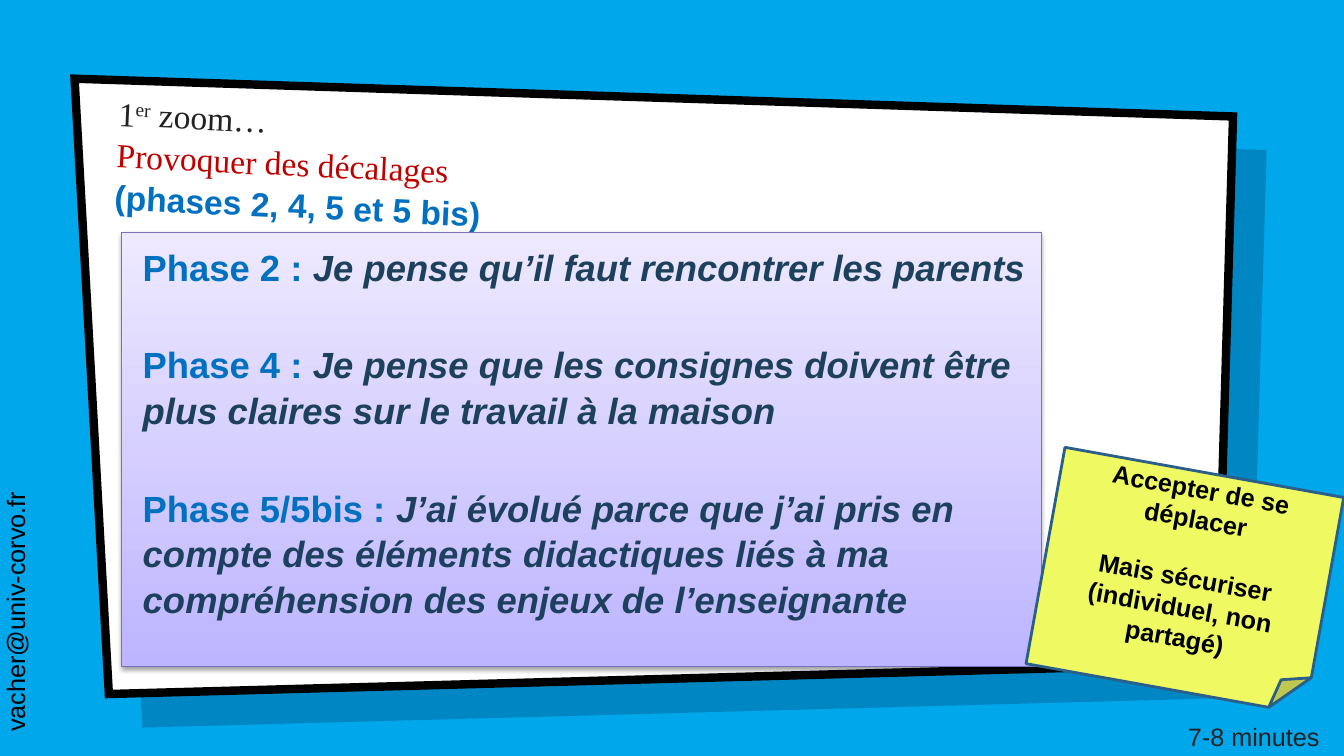
from lxml import etree
from pptx import Presentation
from pptx.dml import color
from pptx.enum import shapes, text
from pptx.oxml import ns
from pptx.util import Pt

INK, BLUE, NAVY = "222222", "0070C0", "1D405D"


def rgb(value):
    return color.RGBColor.from_string(value)


def add_node(parent, tag, **attributes):
    node = etree.SubElement(parent, ns.qn(tag))
    for name, value in attributes.items():
        node.set(name, str(value))
    return node


def set_font(font, size, hue, name="Arial", bold=False):
    font.size, font.name, font.bold = Pt(size), name, bold
    font.color.rgb = rgb(hue)


def set_frame(frame, insets, anchor=text.MSO_ANCHOR.TOP):
    """Insets are left, top, right, bottom in points."""
    frame.word_wrap = True
    frame.auto_size = text.MSO_AUTO_SIZE.NONE
    frame.vertical_anchor = anchor
    (frame.margin_left, frame.margin_top,
     frame.margin_right, frame.margin_bottom) = map(Pt, insets)


def add_panel(page, left, top, fill):
    """Slanted four-cornered panel."""
    corners = [(0, 0), (827.5, 27), (816, 418), (24.5, 439.5)]
    points = [(Pt(left + x), Pt(top + y)) for x, y in corners]
    builder = page.shapes.build_freeform(*points[0])
    builder.add_line_segments(points[1:], close=True)
    panel = builder.convert_to_shape()
    panel.shadow.inherit = False
    panel.fill.solid()
    panel.fill.fore_color.rgb = rgb(fill)
    return panel


def add_card(page, left, top):
    shade = add_panel(page, left + 24, top + 24, "001936")
    shade.line.fill.background()
    fill = shade._element.spPr.find(ns.qn("a:solidFill"))
    add_node(fill[0], "a:alpha", val=22000)
    card = add_panel(page, left, top, "FFFFFF")
    card.line.color.rgb = rgb("000000")
    card.line.width = Pt(6)
    add_node(card.line._get_or_add_ln(), "a:miter", lim=800000)


def place_title(page, left, top, width, height):
    title = page.shapes.title
    page.shapes._spTree.append(title._element)  # in front of the card
    title.left, title.top, title.width, title.height = map(Pt, (left, top, width, height))
    title.rotation = 2.7
    set_frame(title.text_frame, (15, 7.2, 7.2, 7.2), text.MSO_ANCHOR.BOTTOM)
    para = title.text_frame.paragraphs[0]
    para.alignment = text.PP_ALIGN.LEFT
    para.line_spacing = 1.04
    serif = "Times New Roman"
    lines = [
        [("1", INK, serif), ("er", INK, serif), (" zoom…", INK, serif)],
        [("Provoquer des décalages", "C00000", serif)],
        [("(phases 2, 4, 5 et 5 bis)", BLUE, "Arial")],
    ]
    for number, line in enumerate(lines):
        if number:
            para.add_line_break()
        for words, hue, face in line:
            span = para.add_run()
            span.text = words
            set_font(span.font, 24, hue, face, bold=face == "Arial")
            if words == "er":
                span._r.get_or_add_rPr().set("baseline", "30000")


def add_phases(page, left, top, width, height):
    box = page.shapes.add_shape(shapes.MSO_SHAPE.RECTANGLE,
                                *map(Pt, (left, top, width, height)))
    box.fill.gradient()
    box.fill.gradient_angle = 270
    for stop, hue in zip(box.fill.gradient_stops, ("EEE9FF", "BDB5FF")):
        stop.color.rgb = rgb(hue)
    box.line.color.rgb = rgb("7D70C0")
    box.line.width = Pt(0.75)
    box.shadow.inherit = False
    effects = box._element.spPr.find(ns.qn("a:effectLst"))
    shadow = add_node(effects, "a:outerShdw", blurRad=Pt(3), dist=Pt(1.6),
                      dir=5400000, rotWithShape=0)
    add_node(add_node(shadow, "a:srgbClr", val="000000"), "a:alpha", val=38000)

    frame = box.text_frame
    set_frame(frame, (15, 7.2, 7.2, 7.2))
    phases = [
        ("Phase 2 : ", "Je pense qu’il faut rencontrer les parents"),
        ("Phase 4 : ", "Je pense que les consignes doivent être plus claires "
                       "sur le travail à la maison"),
        ("Phase 5/5bis : ", "J’ai évolué parce que j’ai pris en compte des éléments "
                            "didactiques liés à ma compréhension des enjeux de "
                            "l’enseignante"),
    ]
    for number, (label, quote) in enumerate(phases):
        para = frame.add_paragraph() if number else frame.paragraphs[0]
        para.alignment = text.PP_ALIGN.LEFT
        para.line_spacing = 1.04
        para.space_before = Pt(37.5 if number else 0)
        for words, hue in ((label, BLUE), (quote, NAVY)):
            span = para.add_run()
            span.text = words
            set_font(span.font, 26, hue, bold=True)
            span.font.italic = words == quote


def add_note(page, left, top, width, height):
    note = page.shapes.add_shape(shapes.MSO_SHAPE.FOLDED_CORNER,
                                 *map(Pt, (left, top, width, height)))
    note.rotation = 10.2
    note.shadow.inherit = False
    note.fill.solid()
    note.fill.fore_color.rgb = rgb("EFFA62")
    note.line.color.rgb = rgb("2B5F8A")
    note.line.width = Pt(2)
    frame = note.text_frame
    set_frame(frame, (7.2, 3.6, 7.2, 3.6), text.MSO_ANCHOR.MIDDLE)
    advice = ["Accepter de se déplacer", "Mais sécuriser (individuel, non partagé)"]
    for number, words in enumerate(advice):
        para = frame.add_paragraph() if number else frame.paragraphs[0]
        para.text = words
        para.alignment = text.PP_ALIGN.CENTER
        para.space_before = Pt(20.7 * number)
        set_font(para.font, 18, "000000", bold=True)


def add_label(page, words, hue, left, top, width, height, upward=False):
    label = page.shapes.add_textbox(*map(Pt, (left, top, width, height)))
    set_frame(label.text_frame, (0, 0, 0, 0))
    if upward:
        label.text_frame._txBody.bodyPr.set("vert", "vert270")
    para = label.text_frame.paragraphs[0]
    para.text = words
    set_font(para.font, 18, hue)


def build_slide(deck):
    page = deck.slides.add_slide(deck.slide_layouts[5])
    page.background.fill.solid()
    page.background.fill.fore_color.rgb = rgb("00A7EB")
    add_card(page, 53.3, 56.2)
    place_title(page, 68.4, 59.8, 738, 118.8)
    add_phases(page, 87, 166.3, 656.8, 309.7)
    add_label(page, "7-8 minutes", INK, 848.5, 515, 110, 22)
    add_note(page, 745.2, 336.2, 202.3, 157)
    add_label(page, "vacher@univ-corvo.fr", "000000", 0, 324, 20, 198.7, upward=True)


def main():
    deck = Presentation()
    deck.slide_width, deck.slide_height = Pt(960), Pt(540)
    build_slide(deck)
    deck.save("out.pptx")


if __name__ == "__main__":
    main()
